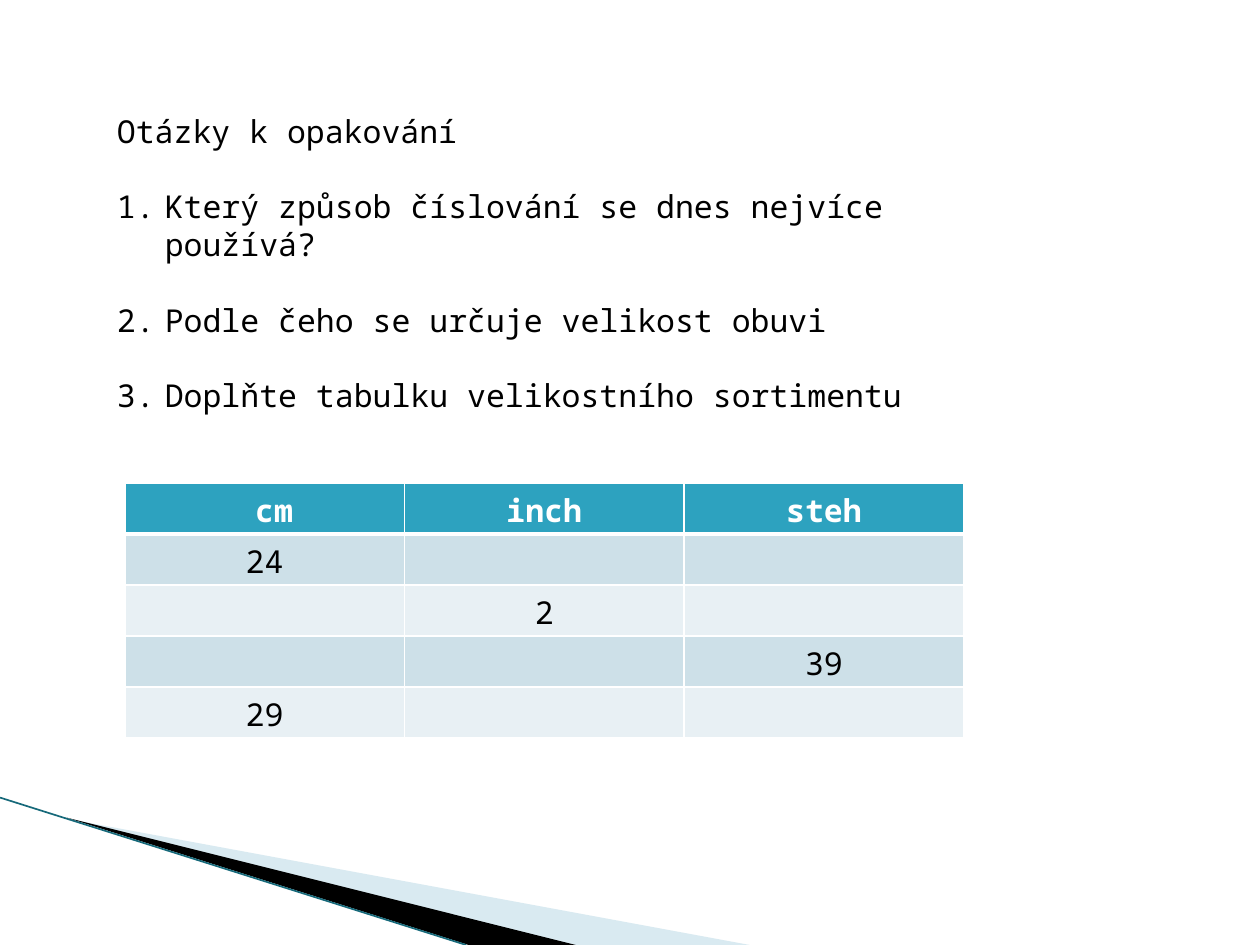
from dataclasses import dataclass

from lxml import etree
from pptx import Presentation
from pptx.dml.color import RGBColor
from pptx.enum.shapes import MSO_CONNECTOR
from pptx.enum.text import PP_ALIGN
from pptx.oxml.ns import qn
from pptx.slide import Slide
from pptx.table import _Cell
from pptx.text.text import _Paragraph
from pptx.util import Inches, Length, Pt

CENTER = PP_ALIGN.CENTER
STRAIGHT = MSO_CONNECTOR.STRAIGHT
SLIDE_WIDTH = Inches(10)
SLIDE_HEIGHT = Inches(7.5)


@dataclass(frozen=True)
class Theme:
    font: str = "Noto Sans Mono"
    text_size: float = 18
    question_gap: float = 21.5
    text: str = "000000"
    background: str = "FFFFFF"
    header: str = "2DA2BF"
    bands: tuple[str, str] = ("CDE0E8", "E8F0F4")
    pale_wedge: str = "A0CBDC"
    dark_wedge: str = "000000"
    edge: str = "16697A"


@dataclass(frozen=True)
class Wedge:
    points: tuple[tuple[float, float], ...]
    color: str
    opacity: int = 100


THEME = Theme()
WEDGES = (
    Wedge(((5.5, 86.7), (59.5, 100), (45.6, 100)), THEME.pale_wedge, 40),
    Wedge(((5.3, 86.53), (45.7, 100), (37.2, 100)), THEME.dark_wedge),
)
TITLE = "Otázky k opakování"
QUESTIONS = (
    "Který způsob číslování se dnes nejvíce používá?",
    "Podle čeho se určuje velikost obuvi",
    "Doplňte tabulku velikostního sortimentu",
)
SIZES = (
    (" cm", "inch", "steh"),
    ("24", "", ""),
    ("", "2", ""),
    ("", "", "39"),
    ("29", "", ""),
)


def across(percent: float) -> Length:
    return Length(round(SLIDE_WIDTH * percent / 100))


def down(percent: float) -> Length:
    return Length(round(SLIDE_HEIGHT * percent / 100))


def format_runs(paragraph: _Paragraph, color: str, bold: bool = False) -> None:
    for run in paragraph.runs:
        run.font.name = THEME.font
        run.font.size = Pt(THEME.text_size)
        run.font.bold = bold
        run.font.color.rgb = RGBColor.from_string(color)


def draw_wedge(slide: Slide, wedge: Wedge) -> None:
    start, *others = [(across(x), down(y)) for x, y in wedge.points]
    builder = slide.shapes.build_freeform(*start)
    builder.add_line_segments(others, close=True)
    shape = builder.convert_to_shape()
    shape.shadow.inherit = False
    shape.line.fill.background()
    shape.fill.solid()
    shape.fill.fore_color.rgb = RGBColor.from_string(wedge.color)
    if wedge.opacity < 100:
        color = shape._element.spPr.find(qn("a:solidFill"))[0]
        etree.SubElement(color, qn("a:alpha"), val=str(wedge.opacity * 1000))


def draw_edge(slide: Slide) -> None:
    connector = slide.shapes.add_connector(
        STRAIGHT, 0, down(84.4), across(37), down(100)
    )
    connector.line.color.rgb = RGBColor.from_string(THEME.edge)
    connector.line.width = Pt(0.95)
    etree.SubElement(connector._element.spPr, qn("a:effectLst"))


def number_paragraph(paragraph: _Paragraph) -> None:
    properties = paragraph._p.get_or_add_pPr()
    indent = Inches(0.38)
    properties.set("marL", str(indent))
    properties.set("indent", str(-indent))
    etree.SubElement(properties, qn("a:buFont"), typeface=THEME.font)
    etree.SubElement(properties, qn("a:buAutoNum"), type="arabicPeriod")


def draw_questions(slide: Slide) -> None:
    box = slide.shapes.add_textbox(across(8.3), down(11.2), across(64.3), down(37.7))
    frame = box.text_frame
    frame.word_wrap = True
    title = frame.paragraphs[0]
    title.text = TITLE
    format_runs(title, THEME.text)
    for question in QUESTIONS:
        paragraph = frame.add_paragraph()
        paragraph.text = question
        number_paragraph(paragraph)
        paragraph.space_before = Pt(THEME.question_gap)
        format_runs(paragraph, THEME.text)


def border_cell(cell: _Cell, bottom_width: float) -> None:
    properties = cell._tc.get_or_add_tcPr()
    widths = {"a:lnL": 1, "a:lnR": 1, "a:lnT": 1, "a:lnB": bottom_width}
    for side, width in widths.items():
        line = etree.SubElement(properties, qn(side), w=str(Pt(width)))
        fill = etree.SubElement(line, qn("a:solidFill"))
        etree.SubElement(fill, qn("a:srgbClr"), val=THEME.background)


def draw_cell(cell: _Cell, text: str, is_header: bool, fill: str) -> None:
    border_cell(cell, 3 if is_header else 1)
    cell.fill.solid()
    cell.fill.fore_color.rgb = RGBColor.from_string(fill)
    paragraph = cell.text_frame.paragraphs[0]
    paragraph.text = text
    paragraph.alignment = CENTER
    format_runs(paragraph, THEME.background if is_header else THEME.text, is_header)


def draw_size_table(slide: Slide) -> None:
    frame = slide.shapes.add_table(
        len(SIZES), len(SIZES[0]), across(9.9), down(51.1), across(66.6), down(27)
    )
    table = frame.table
    table.horz_banding = False
    for row_index, values in enumerate(SIZES):
        is_header = row_index == 0
        fill = THEME.header if is_header else THEME.bands[(row_index - 1) % 2]
        for column_index, text in enumerate(values):
            draw_cell(table.cell(row_index, column_index), text, is_header, fill)


def main() -> None:
    presentation = Presentation()
    presentation.slide_width = SLIDE_WIDTH
    presentation.slide_height = SLIDE_HEIGHT
    slide = presentation.slides.add_slide(presentation.slide_layouts[6])
    slide.background.fill.solid()
    slide.background.fill.fore_color.rgb = RGBColor.from_string(THEME.background)
    for wedge in WEDGES:
        draw_wedge(slide, wedge)
    draw_edge(slide)
    draw_questions(slide)
    draw_size_table(slide)
    presentation.save("out.pptx")


if __name__ == "__main__":
    main()
